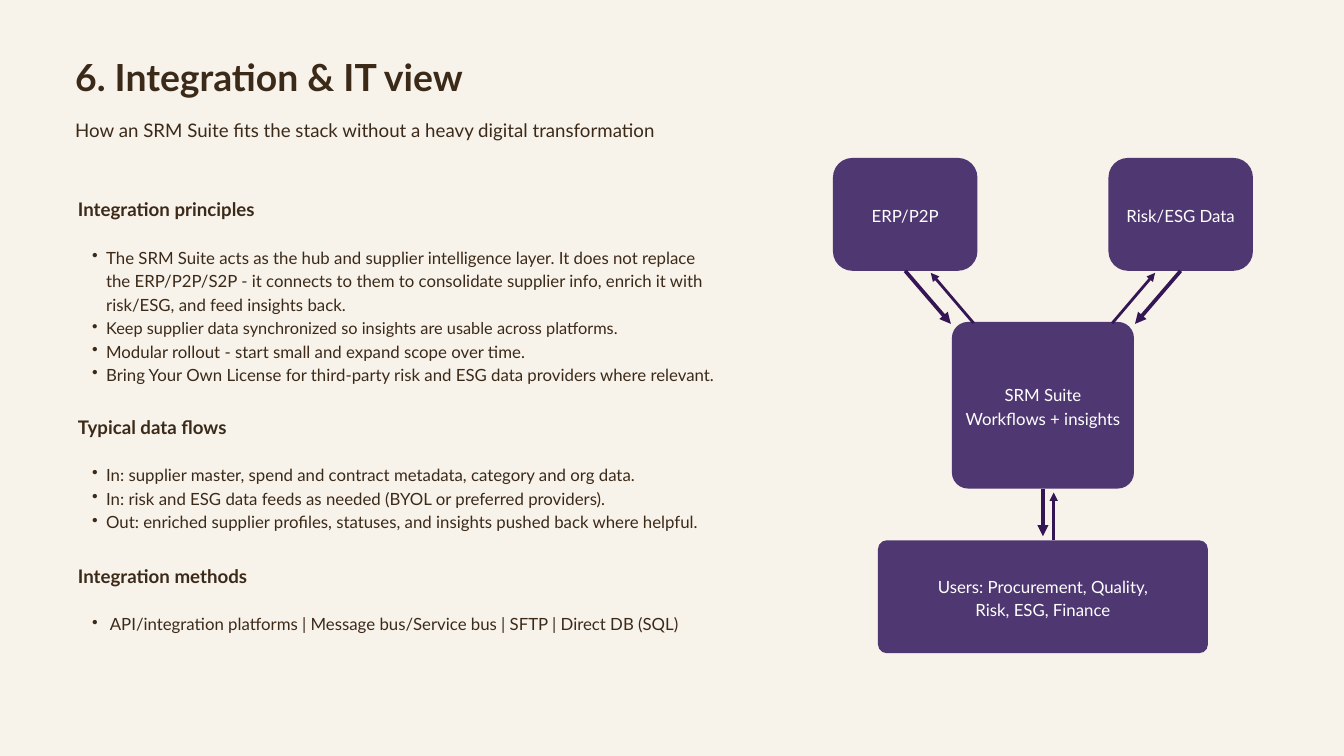
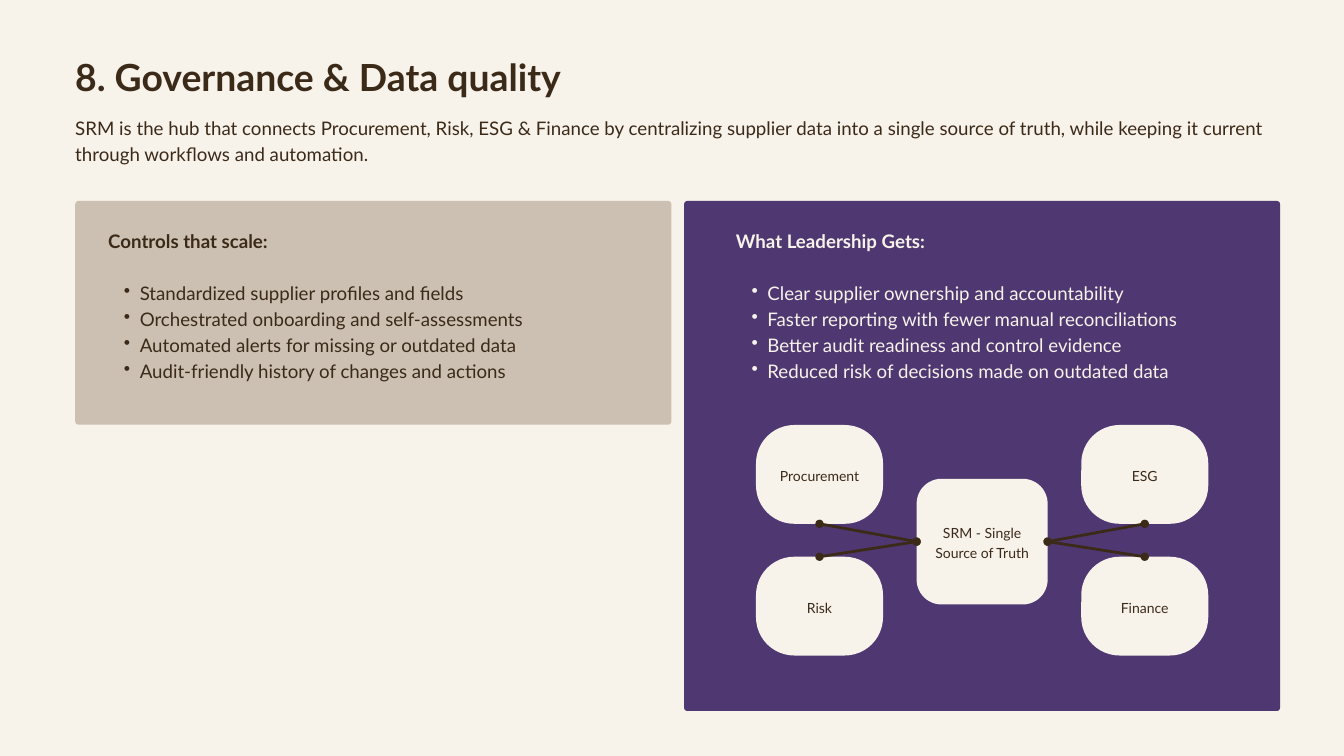
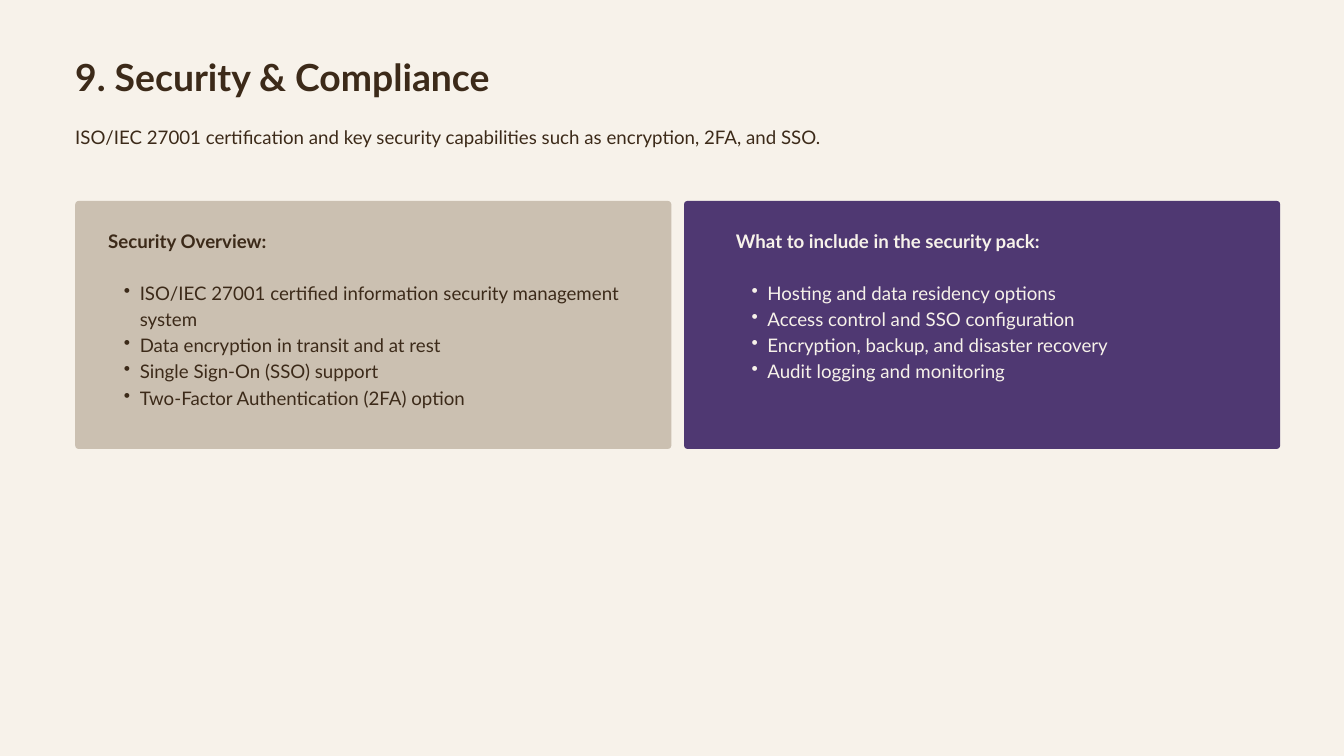
"""Build three slides on integration, governance and security of an SRM Suite."""
import dataclasses

import lxml.etree
import pptx
import pptx.dml.color
import pptx.enum.shapes
import pptx.enum.text
import pptx.oxml.ns
import pptx.util


@dataclasses.dataclass(frozen=True)
class Theme:
    font: str = "Lato"
    cream: str = "F7F2EA"
    brown: str = "3C2A19"
    sand: str = "CBC0B1"
    purple: str = "4F3872"
    arrow: str = "351654"
    white: str = "FFFFFF"
    title: float = 40
    body: float = 20
    detail: float = 18
    node: float = 15
    leading: float = 1.4


THEME = Theme()
WIDTH, HEIGHT = 20, 11.25
MARGIN = 1.12
GUTTER = 0.19
CARD_WIDTH = 8.87
CARD_TOP = 2.99
CARD_LEFTS = (MARGIN, MARGIN + CARD_WIDTH + GUTTER)

INTEGRATION = {
    "title": "6. Integration & IT view",
    "subtitle": "How an SRM Suite fits the stack without a heavy digital transformation",
    "subtitle_top": 1.72,
    "sections": [
        (2.89, "Integration principles", [
            "The SRM Suite acts as the hub and supplier intelligence layer. It does not replace the "
            "ERP/P2P/S2P - it connects to them to consolidate supplier info, enrich it with risk/ESG, "
            "and feed insights back.",
            ("Keep supplier data synchronized so insights are usable across platforms.", 17.5),
            "Modular rollout - start small and expand scope over time.",
            "Bring Your Own License for third-party risk and ESG data providers where relevant.",
        ]),
        (6.13, "Typical data flows", [
            "In: supplier master, spend and contract metadata, category and org data.",
            "In: risk and ESG data feeds as needed (BYOL or preferred providers).",
            "Out: enriched supplier profiles, statuses, and insights pushed back where helpful.",
        ]),
        (8.35, "Integration methods", [
            " API/integration platforms | Message bus/Service bus | SFTP | Direct DB (SQL)",
        ]),
    ],
    "sources": ["ERP/P2P", "Risk/ESG Data"],
    "hub": ["SRM Suite", "Workflows + insights"],
    "users": ["Users: Procurement, Quality,", "Risk, ESG, Finance"],
}
GOVERNANCE = {
    "title": "8. Governance & Data quality",
    "subtitle": "SRM is the hub that connects Procurement, Risk, ESG & Finance by centralizing supplier "
                "data into a single source of truth, while keeping it current through workflows and "
                "automation.",
    "subtitle_top": 1.68,
    "card_heights": (3.33, 7.59),
    "cards": [
        ("Controls that scale:", [
            "Standardized supplier profiles and fields",
            "Orchestrated onboarding and self-assessments",
            "Automated alerts for missing or outdated data",
            "Audit-friendly history of changes and actions",
        ]),
        ("What Leadership Gets:", [
            "Clear supplier ownership and accountability",
            "Faster reporting with fewer manual reconciliations",
            "Better audit readiness and control evidence",
            "Reduced risk of decisions made on outdated data",
        ]),
    ],
    "hub": ["SRM - Single Source of Truth"],
    "functions": [("Procurement", "ESG"), ("Risk", "Finance")],
}
SECURITY = {
    "title": "9. Security & Compliance",
    "subtitle": "ISO/IEC 27001 certification and key security capabilities such as encryption, 2FA, and SSO.",
    "subtitle_top": 1.81,
    "card_heights": (3.69, 3.69),
    "cards": [
        ("Security Overview:", [
            "ISO/IEC 27001 certified information security management system",
            "Data encryption in transit and at rest",
            "Single Sign-On (SSO) support",
            "Two-Factor Authentication (2FA) option",
        ]),
        ("What to include in the security pack:", [
            "Hosting and data residency options",
            "Access control and SSO configuration",
            "Encryption, backup, and disaster recovery",
            "Audit logging and monitoring",
        ]),
    ],
}


def inches(*lengths):
    return [pptx.util.Inches(length) for length in lengths]


def rgb(color):
    return pptx.dml.color.RGBColor.from_string(color)


def write(frame, text, size=THEME.body, color=THEME.brown, bold=False, leading=None,
          before=0, indent=None, centered=False):
    paragraph = frame.paragraphs[0]
    if paragraph.runs:
        paragraph = frame.add_paragraph()
    paragraph.line_spacing = pptx.util.Pt(leading or size * THEME.leading)
    if before:
        paragraph.space_before = pptx.util.Pt(before)
    if centered:
        paragraph.alignment = pptx.enum.text.PP_ALIGN.CENTER
    if indent:
        paragraph.level = 1
        properties = paragraph._p.get_or_add_pPr()
        properties.set("marL", str(pptx.util.Inches(indent)))
        properties.set("indent", str(-pptx.util.Inches(indent / 2)))
        bullet = lxml.etree.SubElement(properties, pptx.oxml.ns.qn("a:buChar"))
        bullet.set("char", "•")
    run = paragraph.add_run()
    run.text = text
    run.font.name = THEME.font
    run.font.size = pptx.util.Pt(size)
    run.font.bold = bold
    run.font.color.rgb = rgb(color)


def clear_margins(frame):
    frame.word_wrap = True
    frame.margin_left = frame.margin_right = frame.margin_top = frame.margin_bottom = 0
    return frame


def text_area(slide, left, top, width, height):
    return clear_margins(slide.shapes.add_textbox(*inches(left, top, width, height)).text_frame)


def bulleted(frame, heading, points, size=THEME.body, color=THEME.brown, indent=0.47):
    leading = size * THEME.leading
    write(frame, heading, color=color, bold=True)
    for index, point in enumerate(points):
        text, point_size = point if isinstance(point, tuple) else (point, size)
        write(frame, text, size=point_size, color=color, leading=leading, indent=indent,
              before=0 if index else leading)


def rounded(slide, left, top, width, height, radius, fill):
    panel = slide.shapes.add_shape(pptx.enum.shapes.MSO_SHAPE.ROUNDED_RECTANGLE,
                                   *inches(left, top, width, height))
    panel.adjustments[0] = radius / min(width, height)
    panel.shadow.inherit = False
    panel.fill.solid()
    panel.fill.fore_color.rgb = rgb(fill)
    panel.line.fill.background()
    return panel


def node(slide, lines, center, middle, width, height, radius, fill, **text_format):
    box = rounded(slide, center - width / 2, middle - height / 2, width, height, radius, fill)
    frame = clear_margins(box.text_frame)
    frame.vertical_anchor = pptx.enum.text.MSO_ANCHOR.MIDDLE
    for line in lines:
        write(frame, line, centered=True, **text_format)
    return box


def link(slide, start=(0, 0), end=(0, 0), joins=(None, None), color=THEME.arrow, weight=3,
         head=None, tail="triangle"):
    line = slide.shapes.add_connector(pptx.enum.shapes.MSO_CONNECTOR.STRAIGHT, *inches(*start, *end))
    for join, connect in zip(joins, (line.begin_connect, line.end_connect)):
        if join:
            connect(*join)
    line.line.width = pptx.util.Pt(weight)
    line.line.color.rgb = rgb(color)
    properties = line.element.spPr
    outline = properties.find(pptx.oxml.ns.qn("a:ln"))
    for tag, ending in (("a:headEnd", head), ("a:tailEnd", tail)):
        if ending:
            lxml.etree.SubElement(outline, pptx.oxml.ns.qn(tag)).set("type", ending)
    lxml.etree.SubElement(properties, pptx.oxml.ns.qn("a:effectLst"))


def start_slide(deck, content):
    slide = deck.slides.add_slide(deck.slide_layouts[6])
    slide.background.fill.solid()
    slide.background.fill.fore_color.rgb = rgb(THEME.cream)
    write(text_area(slide, MARGIN, 0.7, 12, 0.75), content["title"], size=THEME.title, bold=True)
    write(text_area(slide, MARGIN, content["subtitle_top"], 17.94, 0.77), content["subtitle"])
    return slide


def add_cards(slide, content):
    looks = ((THEME.sand, THEME.brown, 0.49, 7.85), (THEME.purple, THEME.cream, 0.77, 7.36))
    for left, height, card, look in zip(CARD_LEFTS, content["card_heights"], content["cards"], looks):
        fill, color, inset, width = look
        rounded(slide, left, CARD_TOP, CARD_WIDTH, height, 0.05, fill)
        bulleted(text_area(slide, left + inset, 3.36, width, 2.69), *card, color=color)


def add_data_flow(slide, content):
    axis, spread = 15.52, 2.05
    look = {"fill": THEME.purple, "color": THEME.white, "size": THEME.detail}
    hub = node(slide, content["hub"], axis, 6.03, 2.71, 2.48, 0.24, **look)
    node(slide, content["users"], axis, 8.88, 4.91, 1.68, 0.13, **look)
    for side, source in zip((-1, 1), content["sources"]):
        box = node(slide, [source], axis + side * spread, 3.19, 2.15, 1.68, 0.29, **look)
        link(slide, end=(axis + side * 1.37, 4.82), joins=((box, 2), None), weight=4)
        link(slide, (axis + side * 1.03, 4.81), (axis + side * 1.67, 4.06))
    link(slide, end=(axis, 7.98), joins=((hub, 2), None), weight=4)
    link(slide, (axis + 0.16, 8.04), (axis + 0.16, 7.33))


def add_hub_map(slide, content):
    axis, spread = CARD_LEFTS[1] + CARD_WIDTH / 2, 2.42
    look = {"fill": THEME.cream, "size": THEME.node}
    hub = node(slide, content["hub"], axis, 8.06, 1.95, 1.87, 0.37, **look)
    for middle, facing, row in zip((7.06, 9.02), (2, 0), content["functions"]):
        for side, hub_side, label in zip((-1, 1), (1, 3), row):
            box = node(slide, [label], axis + side * spread, middle, 1.89, 1.47, 0.57, **look)
            link(slide, joins=((hub, hub_side), (box, facing)), color=THEME.brown,
                 head="oval", tail="oval")


def main():
    deck = pptx.Presentation()
    deck.slide_width, deck.slide_height = inches(WIDTH, HEIGHT)

    integration = start_slide(deck, INTEGRATION)
    for top, heading, points in INTEGRATION["sections"]:
        bulleted(text_area(integration, 1.16, top, 9.5, 0.7 + 0.35 * len(points)), heading, points,
                 size=THEME.detail, indent=0.42)
    add_data_flow(integration, INTEGRATION)

    governance = start_slide(deck, GOVERNANCE)
    add_cards(governance, GOVERNANCE)
    add_hub_map(governance, GOVERNANCE)

    add_cards(start_slide(deck, SECURITY), SECURITY)
    deck.save("out.pptx")


if __name__ == "__main__":
    main()
